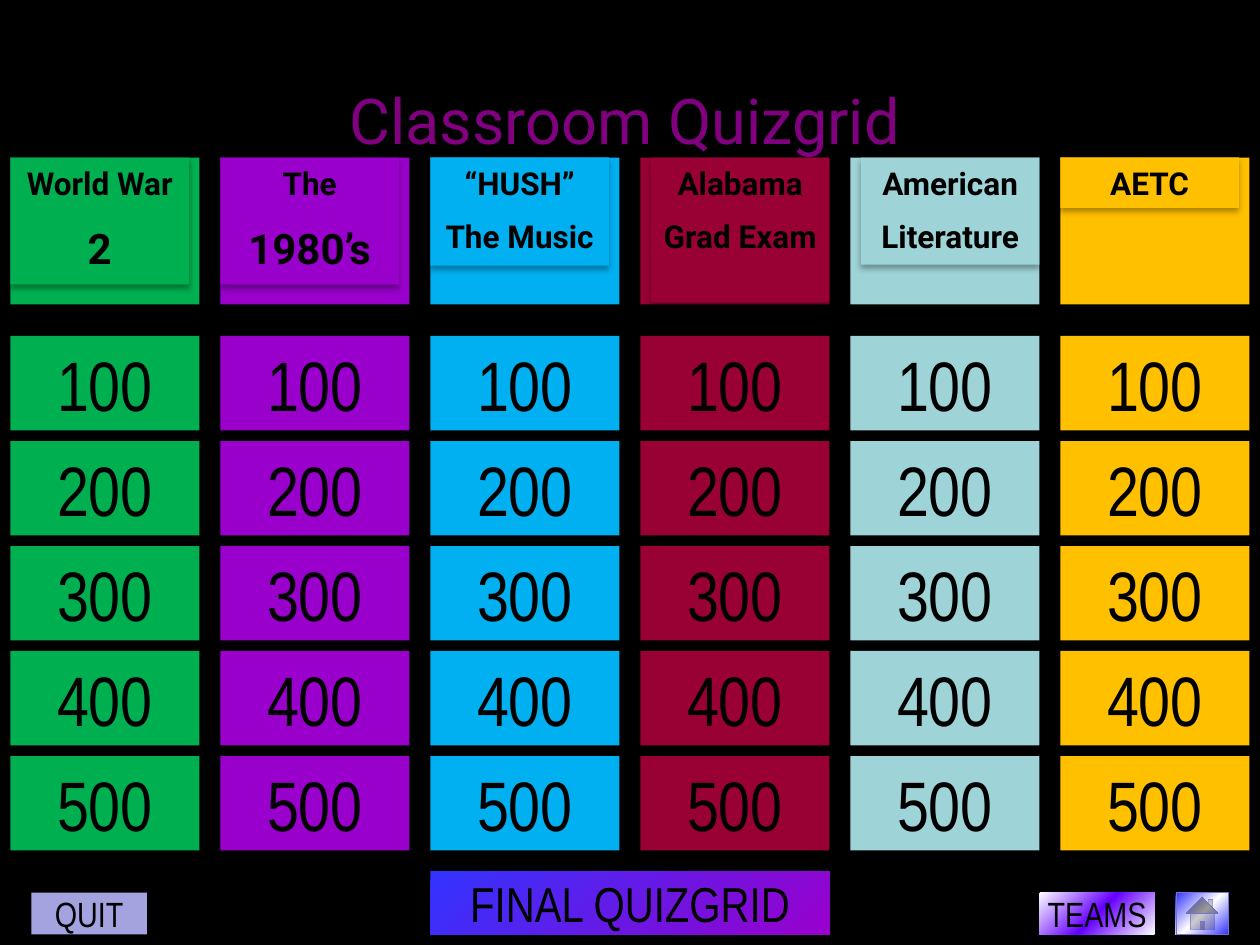
from typing import NamedTuple

from lxml import etree
from pptx import Presentation
from pptx.dml.color import RGBColor
from pptx.enum.shapes import MSO_SHAPE
from pptx.enum.text import MSO_ANCHOR, MSO_AUTO_SIZE, PP_ALIGN
from pptx.oxml.ns import qn
from pptx.util import Inches, Pt

RECT, HOME = MSO_SHAPE.RECTANGLE, MSO_SHAPE.ACTION_BUTTON_HOME
TOP, MIDDLE = MSO_ANCHOR.TOP, MSO_ANCHOR.MIDDLE
CENTER, GROW = PP_ALIGN.CENTER, MSO_AUTO_SIZE.SHAPE_TO_FIT_TEXT
NARROW, ROBOTO = "Arial Narrow", "Roboto"
BLACK = "000000"

# The slide is a grid of 120 by 90 units, twelve to the inch.
UNIT = Inches(1) / 12
PITCH, WIDE = 20, 18
HEAD_TOP, HEAD_TALL = 15, 14
ROW_TOP, ROW_PITCH, ROW_TALL = 32, 10, 9
POINTS = (100, 200, 300, 400, 500)


class Box(NamedTuple):
    left: float
    top: float
    wide: float
    tall: float


class Line(NamedTuple):
    text: str
    size: int = 18


class Topic(NamedTuple):
    color: str
    lines: tuple[Line, ...]
    tall: float
    shift: int = 0


class Button(NamedTuple):
    box: Box
    fills: tuple[str, ...]
    text: str = ""
    size: int = 20
    kind: int = RECT
    edge: str = ""


TOPICS = (
    Topic("00B050", (Line("World War"), Line("2", 24)), 12.1),
    Topic("9900CC", (Line("The"), Line("1980’s", 24)), 12.1),
    Topic("00B0F0", (Line("“HUSH”"), Line("The Music")), 10.3),
    Topic("990033", (Line("Alabama"), Line("Grad Exam")), 13.8, 1),
    Topic("9ED3D7", (Line("American"), Line("Literature")), 10.2, 1),
    Topic("FFC000", (Line("AETC"),), 4.8),
)
BUTTONS = (
    Button(Box(41, 83, 38, 6), ("3333FF", "9900CC"), "FINAL QUIZGRID", 28),
    Button(Box(3, 85, 11, 4), ("A3A3E0",), "QUIT"),
    Button(Box(99, 85, 11, 4), ("FFFFFF", "6600FF", "FFFFFF"), "TEAMS"),
    Button(Box(112, 85, 5, 4), ("3333FF", "FFFFFF", "3333FF"),
           kind=HOME, edge="7575D1"),
)


def rgb(code: str) -> RGBColor:
    return RGBColor.from_string(code)


def place(box: Box) -> list[int]:
    return [round(side * UNIT) for side in box]


def blend(shape, fills: tuple[str, ...]) -> None:
    """Fill with evenly spaced colour stops along the diagonal."""
    shape.fill.gradient()
    grad = shape._element.spPr.find(qn("a:gradFill"))
    stops = grad.find(qn("a:gsLst"))
    for old in list(stops):
        stops.remove(old)
    for i, code in enumerate(fills):
        stop = etree.SubElement(stops, qn("a:gs"),
                                pos=str(100000 * i // (len(fills) - 1)))
        etree.SubElement(stop, qn("a:srgbClr"), val=code)
    grad.find(qn("a:lin")).set("ang", "2700000")


def shade(shape) -> None:
    """Give a soft shadow that falls straight down."""
    shape.shadow.inherit = False
    effects = shape._element.spPr.find(qn("a:effectLst"))
    drop = etree.SubElement(effects, qn("a:outerShdw"), blurRad=str(Pt(3.5)),
                            dist=str(Pt(2.2)), dir="5400000", rotWithShape="0")
    tone = etree.SubElement(drop, qn("a:srgbClr"), val=BLACK)
    etree.SubElement(tone, qn("a:alpha"), val="32000")


def block(shapes, box: Box, fills: tuple[str, ...], kind: int = RECT,
          edge: str = ""):
    shape = shapes.add_shape(kind, *place(box))
    if len(fills) > 1:
        blend(shape, fills)
    else:
        shape.fill.solid()
        shape.fill.fore_color.rgb = rgb(fills[0])
    if edge:
        shape.line.color.rgb = rgb(edge)
        shape.line.width = Pt(0.25)
    else:
        shape.line.fill.background()
    shade(shape)
    return shape


def write(shape, lines: tuple[Line, ...], font: str, color: str = BLACK,
          bold: bool = False, wrap: bool = False, anchor=MIDDLE) -> None:
    frame = shape.text_frame
    frame.word_wrap = wrap
    frame.vertical_anchor = anchor
    frame.text = "\n".join(line.text for line in lines)
    for i, (par, line) in enumerate(zip(frame.paragraphs, lines)):
        par.alignment = CENTER
        if i:
            par.space_before = Pt(line.size / 2)
        face = par.runs[0].font
        face.name, face.size, face.bold = font, Pt(line.size), bold
        face.color.rgb = rgb(color)


def header(shapes, topic: Topic, left: int) -> None:
    group = shapes.add_group_shape().shapes
    block(group, Box(left, HEAD_TOP, WIDE, HEAD_TALL), (topic.color,))
    box = Box(left + topic.shift, HEAD_TOP, WIDE - 1, topic.tall)
    label = block(group, box, (topic.color,))
    write(label, topic.lines, ROBOTO, bold=True, wrap=True, anchor=TOP)
    label.text_frame.auto_size = GROW


def column(shapes, topic: Topic, left: int) -> None:
    for row, points in enumerate(POINTS):
        box = Box(left, ROW_TOP + row * ROW_PITCH, WIDE, ROW_TALL)
        cell = block(shapes, box, (topic.color,))
        write(cell, (Line(str(points), 40),), NARROW)


def main() -> None:
    deck = Presentation()
    deck.slide_width, deck.slide_height = Inches(10), Inches(7.5)
    slide = deck.slides.add_slide(deck.slide_layouts[6])
    slide.background.fill.solid()
    slide.background.fill.fore_color.rgb = rgb(BLACK)
    shapes = slide.shapes

    title = shapes.add_textbox(*place(Box(12, 6.8, 95, 9.2)))
    write(title, (Line("Classroom Quizgrid", 36),), ROBOTO, "800080")
    for i, topic in enumerate(TOPICS):
        left = 1 + i * PITCH
        column(shapes, topic, left)
        header(shapes, topic, left)
    for button in BUTTONS:
        shape = block(shapes, button.box, button.fills, button.kind, button.edge)
        if button.text:
            write(shape, (Line(button.text, button.size),), NARROW)
    deck.save("out.pptx")


if __name__ == "__main__":
    main()
